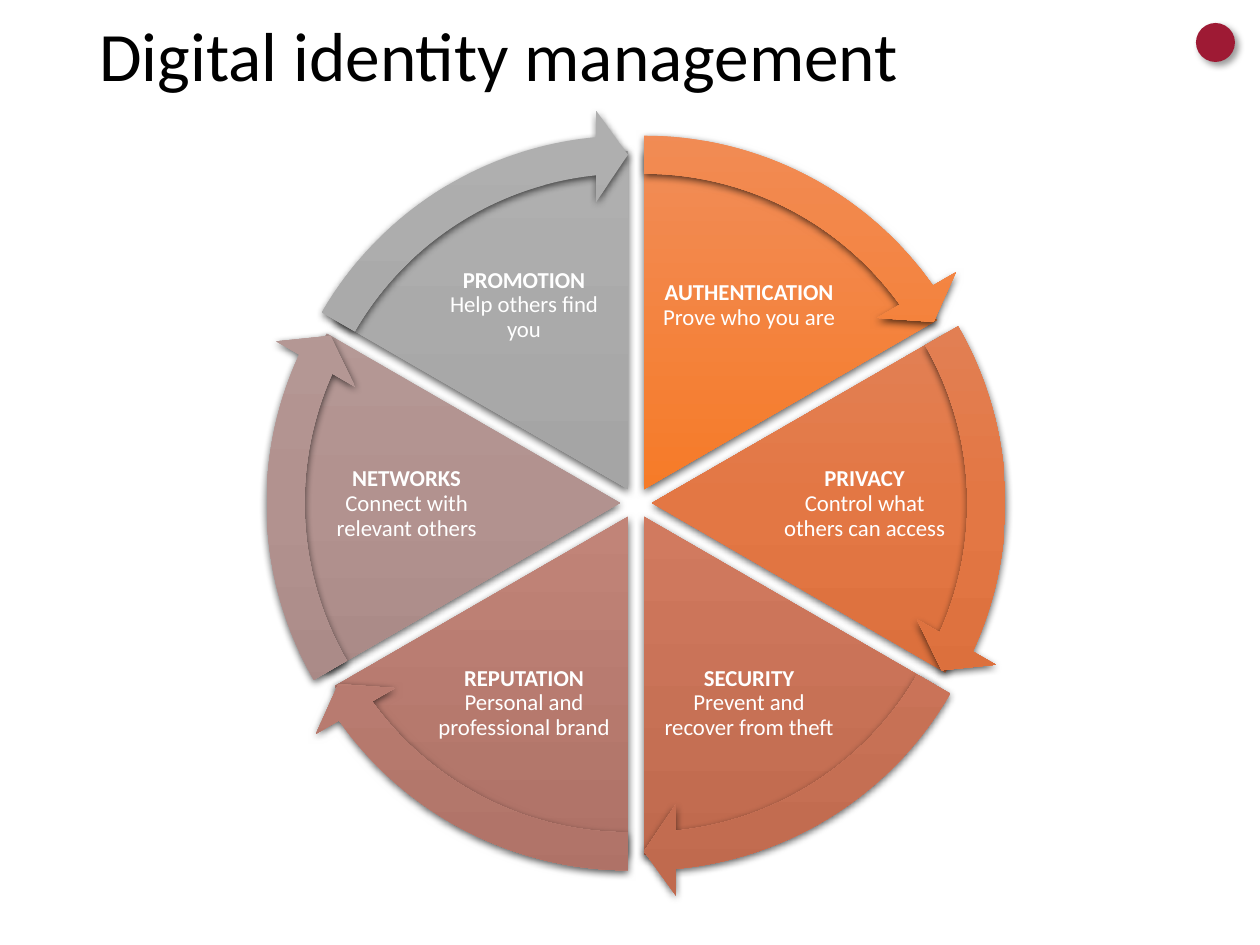
from math import cos, radians, sin

from lxml.etree import SubElement
from pptx import Presentation
from pptx.dml.color import RGBColor
from pptx.enum.shapes import MSO_SHAPE
from pptx.enum.text import MSO_ANCHOR, PP_ALIGN
from pptx.oxml.ns import qn
from pptx.util import Pt

PX = 7257.14  # EMU per px, 126 px to the inch
BLACK = RGBColor(0x00, 0x00, 0x00)
WHITE = RGBColor(0xFF, 0xFF, 0xFF)
CRIMSON = RGBColor(0x9E, 0x1A, 0x34)

CENTER_X, CENTER_Y = 636, 503
EXPLODE = 16
PIE_SIZE, ARROW_SIZE = 677, 760
FULL_TURN = 216  # a full circle in adjustment units; a sector is 36

# heading, detail, label box, gradient from top to bottom
SECTORS = [
    ("AUTHENTICATION", "Prove who you are", (660, 237, 178, 137), ("F18C57", "F67B28", "E56C19")),
    ("PRIVACY", "Control what others can access", (772, 438, 185, 132), ("E18A66", "E37744", "D26734")),
    ("SECURITY", "Prevent and recover from theft", (660, 635, 178, 137), ("D28C78", "D17A5F", "C06A4E")),
    ("REPUTATION", "Personal and professional brand", (435, 635, 178, 137), ("C5948B", "C18478", "AF7267")),
    ("NETWORKS", "Connect with relevant others", (314, 438, 185, 132), ("B9A09D", "B2928F", "A0807D")),
    ("PROMOTION", "Help others find you", (435, 237, 178, 137), ("AFAFAF", "A5A5A5", "939393")),
]


def emu(*lengths):
    return [round(length * PX) for length in lengths]


def add_shadowed(preset, bounds, colors, opacity, blur, distance, angle):
    """Add a borderless shape with a solid or vertical gradient fill and an outer shadow."""
    shape = slide.shapes.add_shape(preset, *emu(*bounds))
    shape.line.fill.background()
    if len(colors) == 1:
        shape.fill.solid()
        shape.fill.fore_color.rgb = colors[0]
    else:
        shape.fill.gradient()
        shape.fill.gradient_angle = 270
        stops = shape.element.spPr.find(".//" + qn("a:gsLst"))
        for stop in list(stops):
            stops.remove(stop)
        for index, color in enumerate(colors):
            position = 100000 * index // (len(colors) - 1)
            stop = SubElement(stops, qn("a:gs"), pos=str(position))
            SubElement(stop, qn("a:srgbClr"), val=str(color))
    shape.shadow.inherit = False
    shadow = SubElement(
        shape.element.spPr.find(qn("a:effectLst")), qn("a:outerShdw"),
        blurRad=str(Pt(blur)), dist=str(Pt(distance)), dir=str(angle * 60000),
        algn="ctr", rotWithShape="0")
    shade = SubElement(shadow, qn("a:srgbClr"), val=str(BLACK))
    SubElement(shade, qn("a:alpha"), val=str(opacity * 1000))
    return shape


deck = Presentation()
deck.slide_width, deck.slide_height = emu(1260, 945)
slide = deck.slides.add_slide(deck.slide_layouts[6])

title = slide.shapes.add_textbox(*emu(87, 16, 1086, 87)).text_frame
title.word_wrap = True
title.vertical_anchor = MSO_ANCHOR.MIDDLE
para = title.paragraphs[0]
para.text = "Digital identity management"
para.line_spacing = 0.9
para.font.name = "Calibri"
para.font.size = Pt(39.6)
para.font.color.rgb = BLACK

# Sectors with their labels, clockwise from the top; the arrows go over them all
arrows = []
for index, (heading, detail, label_bounds, gradient) in enumerate(SECTORS):
    middle = radians(60 * index - 60)
    x = CENTER_X + EXPLODE * cos(middle)
    y = CENTER_Y + EXPLODE * sin(middle)
    start = (162 + 36 * index) % FULL_TURN
    colors = [RGBColor.from_string(color) for color in gradient]

    pie_bounds = (x - PIE_SIZE / 2, y - PIE_SIZE / 2, PIE_SIZE, PIE_SIZE)
    pie = add_shadowed(MSO_SHAPE.PIE, pie_bounds, colors, 63, 4.5, 1.5, 90)
    pie.adjustments[0] = start
    pie.adjustments[1] = (start + 36) % FULL_TURN
    arrows.append((x, y, start, colors))

    label = slide.shapes.add_textbox(*emu(*label_bounds)).text_frame
    label.word_wrap = True
    label.vertical_anchor = MSO_ANCHOR.MIDDLE
    label.margin_left = label.margin_right = Pt(1.3)
    label.margin_top = label.margin_bottom = Pt(1.3)
    para = label.paragraphs[0]
    para.alignment = PP_ALIGN.CENTER
    para.line_spacing = 0.9
    para.font.name = "Calibri"
    para.font.size = Pt(13)
    para.font.color.rgb = WHITE
    span = para.add_run()
    span.text = heading
    span.font.bold = True
    para.add_line_break()
    para.add_run().text = detail

for x, y, start, colors in arrows:
    arrow_bounds = (x - ARROW_SIZE / 2, y - ARROW_SIZE / 2, ARROW_SIZE, ARROW_SIZE)
    arrow = add_shadowed(MSO_SHAPE.CIRCULAR_ARROW, arrow_bounds, colors, 63, 4.5, 1.5, 90)
    head = (start + 32.72) % FULL_TURN
    for number, value in enumerate((0.05, 3.28, head, start, 0.06)):
        arrow.adjustments[number] = value

add_shadowed(MSO_SHAPE.OVAL, (1196, 23, 39, 39), [CRIMSON], 40, 4, 3, 45)

deck.save("out.pptx")
